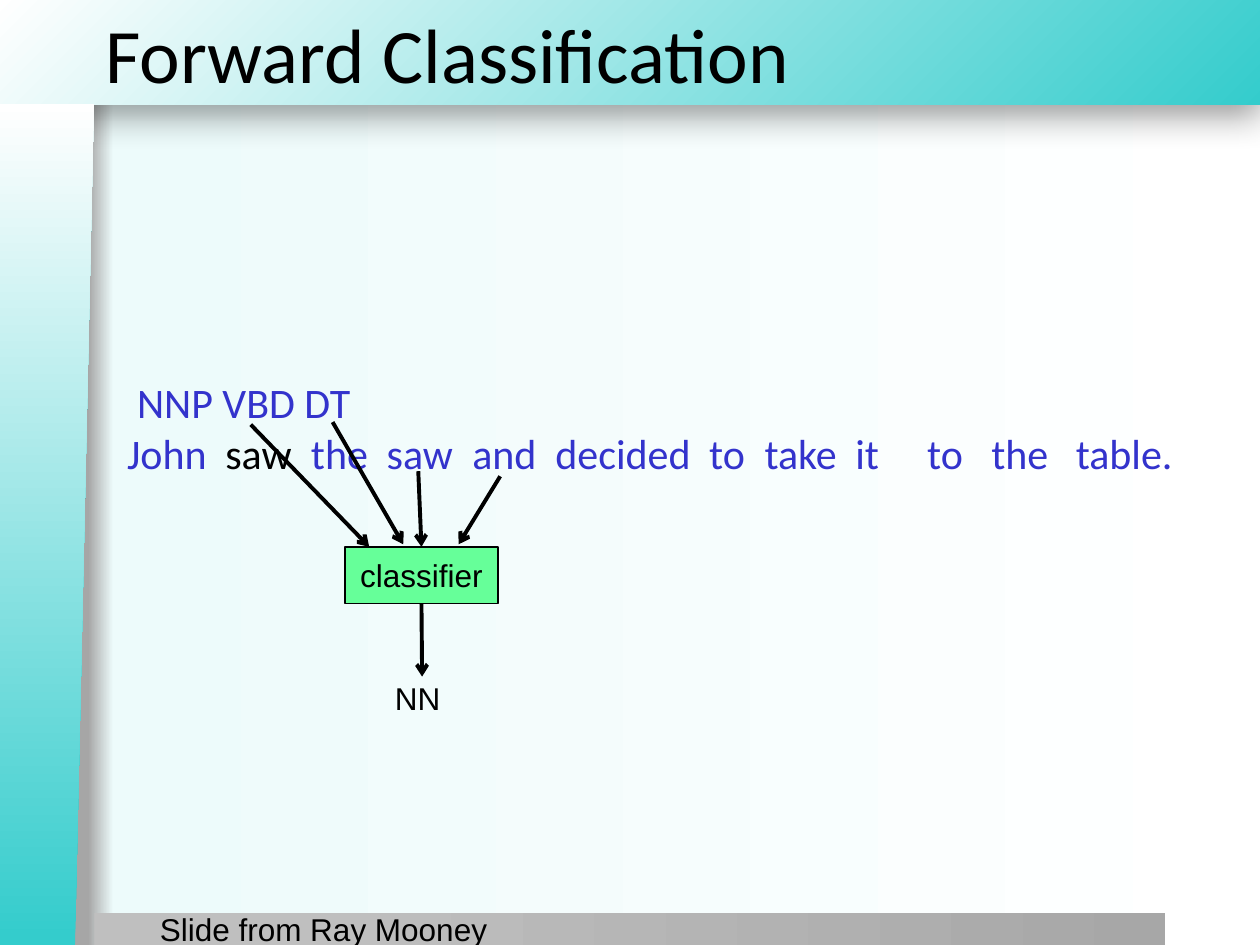
from dataclasses import dataclass

from lxml import etree
from pptx import Presentation
from pptx import util as u
from pptx.dml.color import RGBColor
from pptx.enum import shapes, text
from pptx.oxml.ns import qn

Inches = u.Inches


@dataclass(frozen=True)
class Theme:
    ink: str = "000000"
    word: str = "3333CC"
    box: str = "66FF99"
    teal: str = "34CCCC"
    white: str = "FFFFFF"
    mist: str = "EDFBFB"
    gray: str = "A6A6A6"
    foot: tuple = ("BFBFBF", "A7A7A7")
    head: int = 44
    body: int = 24
    note: int = 18
    main: str = "Calibri"
    side: str = "Arial"


T = Theme()


def add(node, tag, **attrs):
    item = etree.SubElement(node, qn(tag))
    for key, val in attrs.items():
        item.set(key, str(val))
    return item


def grade(owner, fill, stops, corner=False):
    """Fill with a left-to-right gradient, or one spreading from the lower right corner."""
    fill.gradient()
    grad = next(owner.element.iter(qn("a:gradFill")))
    grad.clear()
    grad.set("rotWithShape", "1")
    chain = add(grad, "a:gsLst")
    for spot, tone in stops:
        stop = add(chain, "a:gs", pos=spot * 1000)
        add(stop, "a:srgbClr", val=tone)
    if corner:
        ray = add(grad, "a:path", path="circle")
        add(ray, "a:fillToRect", l=100000, t=100000)
    else:
        add(grad, "a:lin", ang=0, scaled=0)


def block(slide, kind, box):
    shape = slide.shapes.add_shape(kind, *map(Inches, box))
    shape.shadow.inherit = False
    shape.line.fill.background()
    return shape


def write(para, words, size, font, tone=T.ink):
    run = para.add_run()
    run.text = words
    run.font.size = u.Pt(size)
    run.font.name = font
    run.font.color.rgb = RGBColor.from_string(tone)


def label(slide, box, words=None, size=T.note, font=T.side, align=None):
    shape = slide.shapes.add_textbox(*map(Inches, box))
    frame = shape.text_frame
    frame.word_wrap = True
    if words:
        write(frame.paragraphs[0], words, size, font)
        frame.paragraphs[0].alignment = align
    return frame


def arrow(slide, start, end):
    line = slide.shapes.add_connector(
        shapes.MSO_CONNECTOR.STRAIGHT, *map(Inches, (*start, *end)))
    line.line.color.rgb = RGBColor.from_string(T.ink)
    line.line.width = u.Pt(2.25)
    add(line.line._get_or_add_ln(), "a:tailEnd", type="arrow")
    add(line.element.spPr, "a:effectLst")
    return line


def banner(slide, box):
    bar = block(slide, shapes.MSO_SHAPE.RECTANGLE, box)
    grade(bar, bar.fill, [(0, T.teal), (100, T.white)], corner=True)
    glow = add(bar.element.spPr.find(qn("a:effectLst")), "a:outerShdw",
               blurRad=u.Pt(20), dist=u.Pt(6), dir=90 * 60000, rotWithShape=0)
    add(add(glow, "a:srgbClr", val=T.ink), "a:alpha", val=40000)


def footer(slide, box):
    bar = block(slide, shapes.MSO_SHAPE.RECTANGLE, box)
    grade(bar, bar.fill, zip((20, 100), T.foot))


def margin(slide, box):
    """Draw the slanted strip; the box is its size before the quarter turn."""
    strip = block(slide, shapes.MSO_SHAPE.FLOWCHART_MANUAL_INPUT, box)
    strip.rotation = 270
    strip.element.spPr.find(qn("a:xfrm")).set("flipV", "1")
    grade(strip, strip.fill, [(1, T.teal), (100, T.white)])


def title(slide, box):
    frame = label(slide, box, "Forward Classification", T.head, T.main)
    frame.vertical_anchor = text.MSO_ANCHOR.MIDDLE


def sentence(slide, box):
    """Write the tags above the words, which stand on tab stops."""
    frame = label(slide, box)
    tags = frame.paragraphs[0]
    tags._p.get_or_add_pPr().set("marL", str(Inches(0.08)))
    write(tags, "NNP VBD DT", T.body, T.main, T.word)

    words = frame.add_paragraph()
    stops = add(words._p.get_or_add_pPr(), "a:tabLst")
    for spot in (0.78, 1.46, 2.06, 2.74, 3.4, 4.62, 5.06, 5.78, 6.35, 6.86, 7.53):
        add(stops, "a:tab", pos=Inches(spot), algn="l")
    rest = "the saw and decided to take it to the table.".split()
    for part, tone in (("John\t", T.word), ("saw", T.ink),
                       ("\t" + "\t".join(rest), T.word)):
        write(words, part, T.body, T.main, tone)


def network(slide, box):
    """Draw the classifier with its four inputs and its output."""
    left, top = box[:2]

    def at(x, y):
        return left + x, top + y

    node = block(slide, shapes.MSO_SHAPE.RECTANGLE, (*at(1.83, 1.4), 1.21, 0.45))
    node.fill.solid()
    node.fill.fore_color.rgb = RGBColor.from_string(T.box)
    node.line.color.rgb = RGBColor.from_string(T.ink)
    node.line.width = u.Pt(1)
    node.text_frame.vertical_anchor = text.MSO_ANCHOR.MIDDLE
    name = node.text_frame.paragraphs[0]
    name.alignment = text.PP_ALIGN.CENTER
    write(name, "classifier", T.note, T.side)

    for start, end in (((1.08, 0.43), (2.02, 1.4)),
                       ((1.73, 0.41), (2.29, 1.38)),
                       ((3.06, 0.84), (2.73, 1.38))):
        arrow(slide, at(*start), at(*end))
    arrow(slide, at(2.41, 0.8), at(2.43, 1.4)).end_connect(node, 0)
    arrow(slide, at(2.43, 1.85), at(2.44, 2.43)).begin_connect(node, 2)
    label(slide, (*at(2.1, 2.4), 0.61, 0.43), "NN", align=text.PP_ALIGN.CENTER)


def main():
    deck = Presentation()
    deck.slide_width, deck.slide_height = Inches(10), Inches(7.5)
    slide = deck.slides.add_slide(deck.slide_layouts[6])
    grade(slide, slide.background.fill, [(7, T.gray), (9, T.mist), (100, T.white)])
    banner(slide, (-0.01, 0, 10.01, 0.83))
    footer(slide, (0.75, 7.25, 8.5, 0.26))
    margin(slide, (-2.97, 3.79, 6.68, 0.75))
    title(slide, (0.74, -0.08, 9.26, 1))
    sentence(slide, (0.91, 2.94, 8.95, 0.91))
    network(slide, (0.91, 2.94, 8.95, 2.83))
    label(slide, (1.17, 7.17, 3.42, 0.25), "Slide from Ray Mooney")
    deck.save("out.pptx")


if __name__ == "__main__":
    main()
